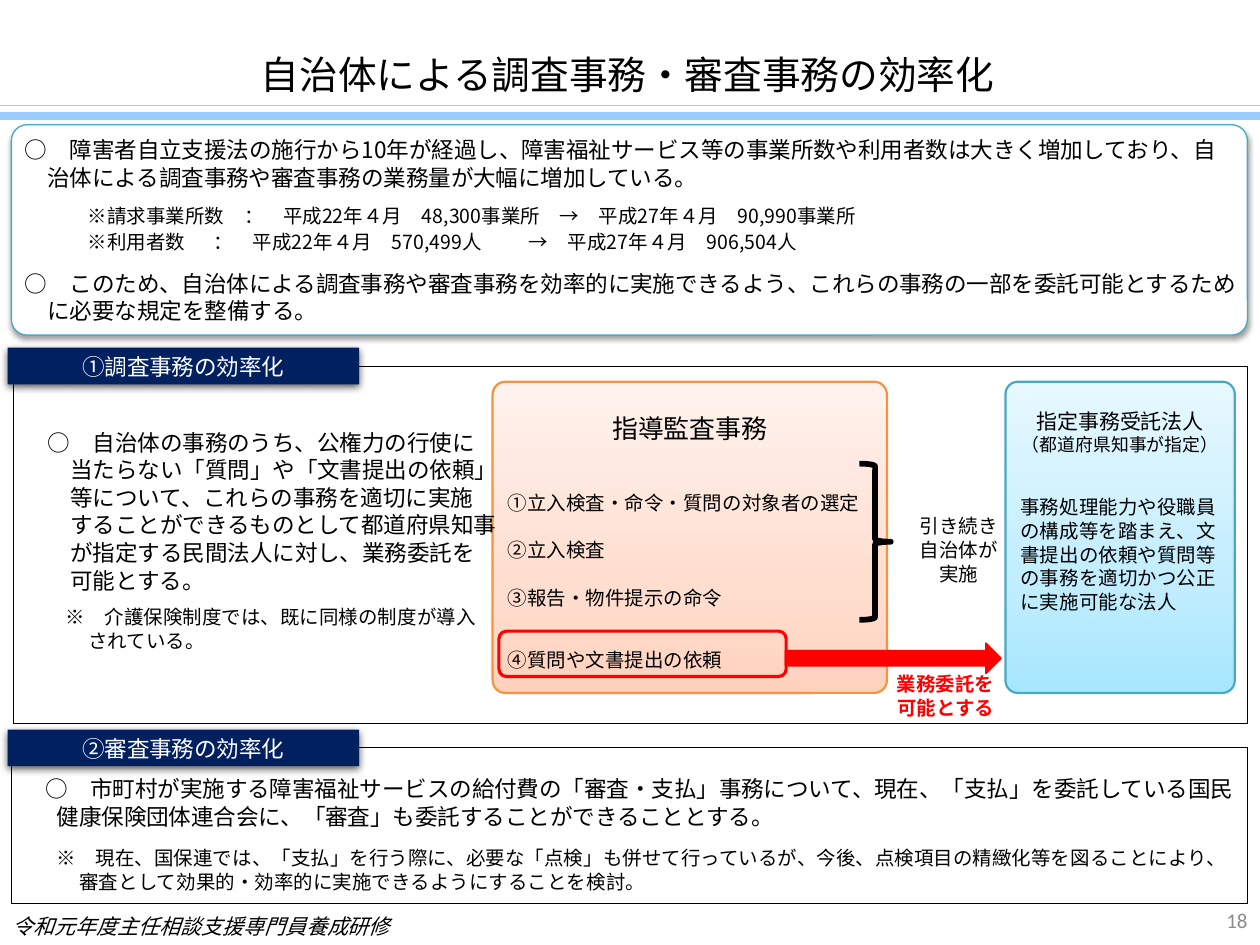
from copy import deepcopy

from lxml import etree
from pptx import Presentation
from pptx.dml.color import RGBColor
from pptx.enum.shapes import MSO_CONNECTOR, MSO_SHAPE
from pptx.enum.text import MSO_ANCHOR, MSO_AUTO_SIZE, PP_ALIGN
from pptx.oxml.ns import qn
from pptx.util import Inches, Pt

RECT, ROUND = MSO_SHAPE.RECTANGLE, MSO_SHAPE.ROUNDED_RECTANGLE
BRACE, ARROW = MSO_SHAPE.RIGHT_BRACE, MSO_SHAPE.RIGHT_ARROW
TOP, MIDDLE = MSO_ANCHOR.TOP, MSO_ANCHOR.MIDDLE
LEFT, CENTER, RIGHT = PP_ALIGN.LEFT, PP_ALIGN.CENTER, PP_ALIGN.RIGHT
GOTHIC, LATIN = "Noto Sans CJK JP", "Calibri"
BODY, NOTE = 12.9, 11.1
LEADING = 1.22
COLORS = {
    "black": "000000", "white": "FFFFFF", "red": "FF0000", "navy": "002060",
    "sky": "99CCFF", "teal": "46AAC5", "orange": "F69240", "gray": "8C8C8C",
}
ORANGE_FADE = [(0, "FFD2BD"), (0.35, "FFDED0"), (1, "FFF2ED")]
BLUE_FADE = [(0, "A7E6FF"), (0.35, "C1EDFF"), (1, "E7F8FF")]
RGB = {name: RGBColor.from_string(value) for name, value in COLORS.items()}

deck = Presentation()
deck.slide_width, deck.slide_height = Inches(10), Inches(7.5)
CELL = deck.slide_width // 100
slide = deck.slides.add_slide(deck.slide_layouts[5])


def place(kind, area, fill=None, line=None, weight=1, corner=None, fade=None, shadow=None):
    box = [round(length * CELL) for length in area]
    if kind is None:
        return slide.shapes.add_textbox(*box)
    shape = slide.shapes.add_shape(kind, *box)
    shape.shadow.inherit = False
    if corner is not None:
        shape.adjustments[0] = corner
    if fade:
        shape.fill.gradient()
        shape.fill.gradient_angle = 90
        stops = shape._element.spPr.find(qn("a:gradFill")).find(qn("a:gsLst"))
        stops.append(deepcopy(stops[0]))
        for stop, (position, color) in zip(shape.fill.gradient_stops, fade):
            stop.position = position
            stop.color.rgb = RGBColor.from_string(color)
    elif fill:
        shape.fill.solid()
        shape.fill.fore_color.rgb = RGB[fill]
    else:
        shape.fill.background()
    if line:
        shape.line.color.rgb = RGB[line]
        shape.line.width = Pt(weight)
    else:
        shape.line.fill.background()
    if shadow:
        alpha, blur, distance = shadow
        effects = shape._element.spPr.find(qn("a:effectLst"))
        outer = etree.SubElement(effects, qn("a:outerShdw"), blurRad=str(Pt(blur)),
                                 dist=str(Pt(distance)), dir="5400000", rotWithShape="0")
        shade = etree.SubElement(outer, qn("a:srgbClr"), val=COLORS["black"])
        etree.SubElement(shade, qn("a:alpha"), val=str(alpha * 1000))
    return shape


def write(shape, paragraphs, anchor=TOP, margins=(0.9, 0.5, 0.9, 0.5), color="black",
          face=GOTHIC, bold=False, italic=False):
    frame = shape.text_frame
    frame.word_wrap = True
    frame.auto_size = MSO_AUTO_SIZE.NONE
    frame.vertical_anchor = anchor
    (frame.margin_left, frame.margin_top,
     frame.margin_right, frame.margin_bottom) = [round(m * CELL) for m in margins]
    for index, (text, size, layout) in enumerate(paragraphs):
        paragraph = frame.add_paragraph() if index else frame.paragraphs[0]
        paragraph.text = text
        paragraph.alignment = layout.get("align", LEFT)
        paragraph.line_spacing = Pt(size * LEADING * layout.get("stretch", 1))
        paragraph.space_before = Pt(layout.get("before", 0))
        properties = paragraph._p.get_or_add_pPr()
        margin, indent = layout.get("indent", (0, 0))
        properties.set("marL", str(round(margin * CELL)))
        properties.set("indent", str(round(indent * CELL)))
        if "tabs" in layout:
            tabs = etree.SubElement(properties, qn("a:tabLst"))
            for tab in layout["tabs"]:
                etree.SubElement(tabs, qn("a:tab"), pos=str(round(tab * CELL)), algn="l")
        font = paragraph.font
        font.size, font.bold, font.italic = Pt(size), bold, italic
        font.color.rgb = RGB[color]
        font.name = face
        etree.SubElement(properties.find(qn("a:defRPr")), qn("a:ea"), typeface=face)


title = slide.shapes.title
title.left, title.top, title.width, title.height = [
    round(length * CELL) for length in (-0.4, 3.5, 100.4, 4.9)]
write(title, [("自治体による調査事務・審査事務の効率化", 22.1, {"align": CENTER})])

for row, weight in ((8.4, 0.5), (9.2, 4.5)):
    rule = slide.shapes.add_connector(
        MSO_CONNECTOR.STRAIGHT, 0, round(row * CELL), deck.slide_width, round(row * CELL))
    rule.line.color.rgb = RGB["sky"]
    rule.line.width = Pt(weight)
    etree.SubElement(rule._element.spPr, qn("a:effectLst"))

audit = place(ROUND, (39.1, 30.3, 31.3, 24.7), line="orange", weight=1.25,
              corner=0.041, fade=ORANGE_FADE)
write(audit, [
    ("指導監査事務", 14.8, {"align": CENTER}),
    ("①立入検査・命令・質問の対象者の選定", NOTE, {"before": 27}),
    ("②立入検査", NOTE, {"before": 13.5}),
    ("③報告・物件提示の命令", NOTE, {"before": 13.5}),
    ("④質問や文書提出の依頼", NOTE, {"before": 22}),
], margins=(0.9, 2.1, 0.9, 0.5))
place(BRACE, (68.2, 36.8, 2.5, 12.4), line="black", weight=3.25)

agency = place(ROUND, (79.8, 30.3, 18.2, 24.7), line="teal", weight=1.25,
               corner=0.054, fade=BLUE_FADE)
write(agency, [
    ("指定事務受託法人", 12, {"align": CENTER}),
    ("（都道府県知事が指定）", 10.2, {"align": CENTER}),
    ("事務処理能力や役職員の構成等を踏まえ、文書提出の依頼や質問等の事務を適切かつ公正に実施可能な法人",
     NOTE, {"before": 22.6}),
], margins=(0.9, 1.8, 0.9, 0.5))

place(ROUND, (39.6, 50.1, 22.8, 3.6), line="red", weight=1.75)
place(ARROW, (62.35, 51.05, 17.1, 2.4), fill="red", line="red")
write(place(None, (69.6, 53, 10.9, 4.4)),
      [(text, NOTE, {"align": CENTER}) for text in ("業務委託を", "可能とする")],
      anchor=MIDDLE, color="red", face=LATIN, bold=True)

overview = place(ROUND, (0.9, 9.9, 98.1, 16.7), fill="white", line="teal", weight=0.75,
                 corner=0.075, shadow=(38, 3.1, 1.6))
hanging = (1.8, -1.8)
figures = {"stretch": 1.1, "indent": (0, 5), "tabs": (19, 46.3)}
write(overview, [
    ("○　障害者自立支援法の施行から10年が経過し、障害福祉サービス等の事業所数や利用者数は大きく増加しており、"
     "自治体による調査事務や審査事務の業務量が大幅に増加している。", BODY, {"indent": hanging}),
    ("※請求事業所数　：　平成22年４月　48,300事業所　→　平成27年４月　90,990事業所", NOTE,
     {**figures, "before": 6}),
    ("※利用者数\t：　平成22年４月　570,499人\t→　平成27年４月　906,504人", NOTE, figures),
    ("○　このため、自治体による調査事務や審査事務を効率的に実施できるよう、これらの事務の一部を"
     "委託可能とするために必要な規定を整備する。", BODY, {"indent": hanging, "before": 9}),
], anchor=MIDDLE, margins=(0.7, 0.4, 0.5, 0.4))

write(place(None, (3, 48.4, 47, 3)),
      [("※　介護保険制度では、既に同様の制度が導入\vされている。", NOTE, {"indent": (3.1, -1.8)})],
      anchor=MIDDLE)
write(place(None, (72, 40.7, 8.2, 5.8)),
      [(text, NOTE, {"align": CENTER}) for text in ("引き続き", "自治体が", "実施")],
      anchor=MIDDLE)

inspection = place(RECT, (1.1, 29.1, 97.9, 28.3), line="black", weight=0.5)
write(inspection, [
    ("○　自治体の事務のうち、公権力の行使に\v当たらない「質問」や「文書提出の依頼」\v"
     "等について、これらの事務を適切に実施\vすることができるものとして都道府県知事\v"
     "が指定する民間法人に対し、業務委託を\v可能とする。", BODY, {"indent": (3.6, -1.8)}),
], margins=(0.9, 4.9, 0.9, 0.5))

review = place(RECT, (0.9, 59.3, 98.1, 12.4), line="black", weight=0.5)
write(review, [
    ("○　市町村が実施する障害福祉サービスの給付費の「審査・支払」事務について、現在、「支払」を委託している"
     "国民健康保険団体連合会に、「審査」も委託することができることとする。", BODY, {"indent": (2.7, -0.9)}),
    ("※　現在、国保連では、「支払」を行う際に、必要な「点検」も併せて行っているが、今後、点検項目の精緻化等を"
     "図ることにより、審査として効果的・効率的に実施できるようにすることを検討。", NOTE,
     {"indent": (4.5, -1.8), "before": 9}),
], margins=(0.9, 2.2, 0.7, 0.5))

for row, heading in ((27.6, "①調査事務の効率化"), (57.9, "②審査事務の効率化")):
    banner = place(RECT, (0.6, row, 27.9, 2.9), fill="navy", shadow=(63, 4.5, 1.5))
    write(banner, [(heading, BODY, {"align": CENTER})], anchor=MIDDLE, color="white")

write(place(None, (0, 72, 39.4, 3)), [("令和元年度主任相談支援専門員養成研修", 12, {})],
      margins=(1, 0.5, 1, 0.5), italic=True)
write(place(None, (77.5, 71, 22.5, 4)), [("18", 12, {"align": RIGHT})],
      anchor=MIDDLE, margins=(1, 0.5, 1, 0.5), color="gray", face=LATIN)

deck.save("out.pptx")
